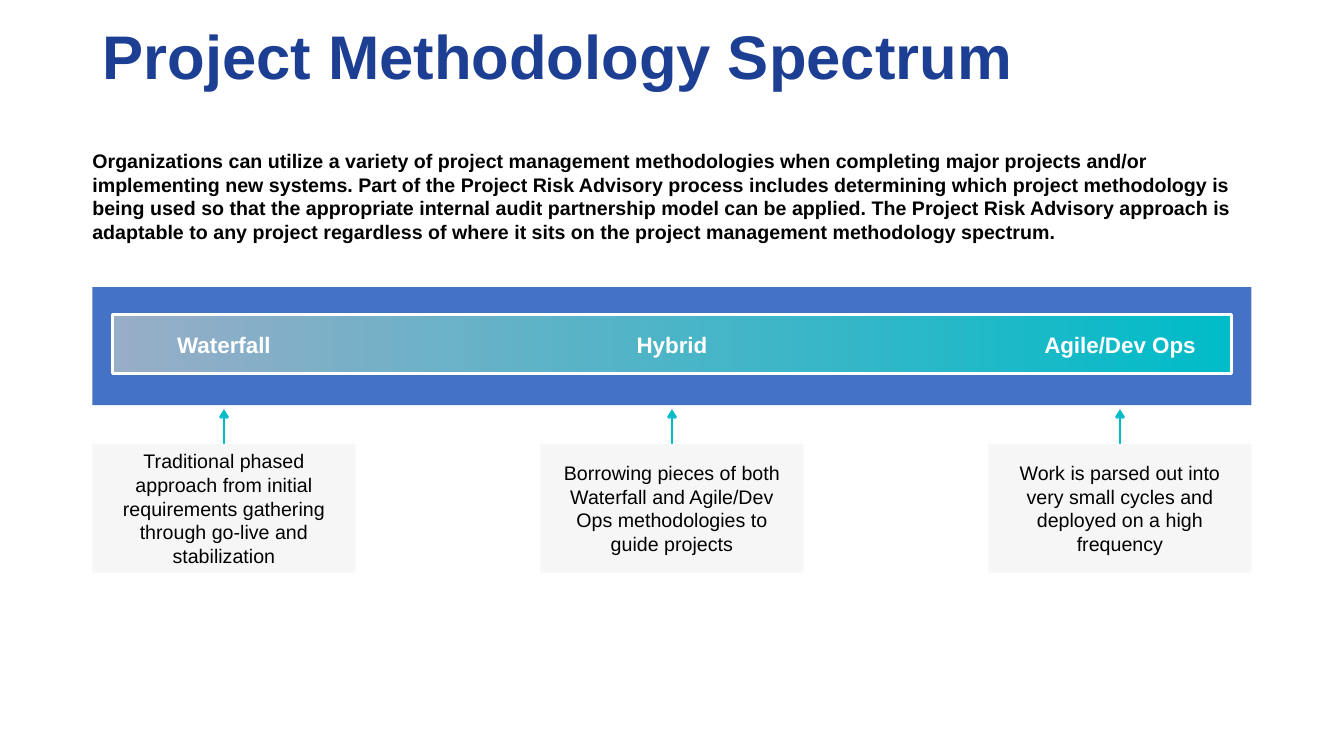
from dataclasses import dataclass

from lxml.etree import SubElement
from pptx import Presentation
from pptx.dml.color import RGBColor
from pptx.enum.shapes import MSO_CONNECTOR, MSO_SHAPE
from pptx.enum.text import MSO_ANCHOR, PP_ALIGN
from pptx.oxml.ns import qn
from pptx.util import Pt

TITLE = "Project Methodology Spectrum"
INTRODUCTION = (
    "Organizations can utilize a variety of project management methodologies when completing "
    "major projects and/or implementing new systems. Part of the Project Risk Advisory process "
    "includes determining which project methodology is being used so that the appropriate "
    "internal audit partnership model can be applied. The Project Risk Advisory approach is "
    "adaptable to any project regardless of where it sits on the project management "
    "methodology spectrum."
)
METHODOLOGIES = [
    ("Waterfall", "Traditional phased approach from initial requirements gathering "
                  "through go-live and stabilization"),
    ("Hybrid", "Borrowing pieces of both Waterfall and Agile/Dev Ops methodologies "
               "to guide projects"),
    ("Agile/Dev Ops", "Work is parsed out into very small cycles and deployed on a high frequency"),
]


@dataclass(frozen=True)
class Theme:
    font: str = "Arial"
    title: str = "1C3F94"
    text: str = "000000"
    white: str = "FFFFFF"
    bar: str = "4472C4"
    teal: str = "00BCC8"
    grey_blue: str = "98ADC7"
    card: str = "F6F6F6"
    title_size: int = 44
    label_size: int = 16
    body_size: int = 14
    line_width: int = 2


THEME = Theme()
LEFT, WIDTH = 66, 828
BAR_TOP, BAR_HEIGHT = 205.2, 84.2
SPECTRUM_INSET, SPECTRUM_TOP, SPECTRUM_HEIGHT = 14.4, 224.6, 42.5
LABEL_WIDTH, LABEL_HEIGHT = 135.4, 26.6
CARD_TOP, CARD_WIDTH, CARD_HEIGHT = 317, 188, 92
CARD_STEP = (WIDTH - CARD_WIDTH) / (len(METHODOLOGIES) - 1)
ARROW_START, ARROW_END = 330.5, 292.3


def color(value):
    return RGBColor.from_string(value)


def write(shape, text, size, text_color, bold=False, align=PP_ALIGN.LEFT,
          anchor=MSO_ANCHOR.MIDDLE, margin=None):
    frame = shape.text_frame
    frame.word_wrap = True
    frame.vertical_anchor = anchor
    if margin is not None:
        frame.margin_left = frame.margin_right = Pt(margin)
        frame.margin_top = frame.margin_bottom = Pt(margin)
    paragraph = frame.paragraphs[0]
    paragraph.alignment = align
    run = paragraph.add_run()
    run.text = text
    run.font.name = THEME.font
    run.font.size = Pt(size)
    run.font.bold = bold
    run.font.color.rgb = color(text_color)
    return paragraph


def add_rectangle(slide, left, top, width, height, fill):
    shape = slide.shapes.add_shape(
        MSO_SHAPE.RECTANGLE, Pt(left), Pt(top), Pt(width), Pt(height))
    shape.shadow.inherit = False
    shape.fill.solid()
    shape.fill.fore_color.rgb = color(fill)
    shape.line.fill.background()
    return shape


def add_arrow(slide, center):
    arrow = slide.shapes.add_connector(
        MSO_CONNECTOR.STRAIGHT, Pt(center), Pt(ARROW_START), Pt(center), Pt(ARROW_END))
    arrow.line.color.rgb = color(THEME.teal)
    arrow.line.width = Pt(THEME.line_width)
    SubElement(arrow.line._get_or_add_ln(), qn("a:tailEnd")).set("type", "arrow")
    SubElement(arrow._element.spPr, qn("a:effectLst"))


def add_spectrum(slide):
    add_rectangle(slide, LEFT, BAR_TOP, WIDTH, BAR_HEIGHT, THEME.bar)
    spectrum = add_rectangle(slide, LEFT + SPECTRUM_INSET, SPECTRUM_TOP,
                             WIDTH - 2 * SPECTRUM_INSET, SPECTRUM_HEIGHT, THEME.teal)
    spectrum.fill.gradient()
    spectrum.fill.gradient_angle = 0
    for stop, stop_color in zip(spectrum.fill.gradient_stops, (THEME.grey_blue, THEME.teal)):
        stop.color.rgb = color(stop_color)
    spectrum.line.color.rgb = color(THEME.white)
    spectrum.line.width = Pt(THEME.line_width)


def add_methodology(slide, index, name, description):
    card_left = LEFT + index * CARD_STEP
    center = card_left + CARD_WIDTH / 2
    label_top = SPECTRUM_TOP + (SPECTRUM_HEIGHT - LABEL_HEIGHT) / 2
    label = slide.shapes.add_textbox(
        Pt(center - LABEL_WIDTH / 2), Pt(label_top), Pt(LABEL_WIDTH), Pt(LABEL_HEIGHT))
    write(label, name, THEME.label_size, THEME.white, bold=True, align=PP_ALIGN.CENTER)
    add_arrow(slide, center)
    card = add_rectangle(slide, card_left, CARD_TOP, CARD_WIDTH, CARD_HEIGHT, THEME.card)
    write(card, description, THEME.body_size, THEME.text, align=PP_ALIGN.CENTER, margin=14.4)


def main():
    presentation = Presentation()
    presentation.slide_width, presentation.slide_height = Pt(960), Pt(540)
    slide = presentation.slides.add_slide(presentation.slide_layouts[5])

    title = slide.shapes.title
    title.left, title.top, title.width, title.height = Pt(LEFT), Pt(0), Pt(WIDTH), Pt(85)
    paragraph = write(title, TITLE, THEME.title_size, THEME.title, bold=True)
    paragraph.line_spacing = 0.9

    introduction = slide.shapes.add_textbox(Pt(LEFT), Pt(106.6), Pt(WIDTH), Pt(67.7))
    write(introduction, INTRODUCTION, THEME.body_size, THEME.text, bold=True,
          anchor=MSO_ANCHOR.TOP, margin=0)

    add_spectrum(slide)
    for index, (name, description) in enumerate(METHODOLOGIES):
        add_methodology(slide, index, name, description)

    presentation.save("out.pptx")


if __name__ == "__main__":
    main()
